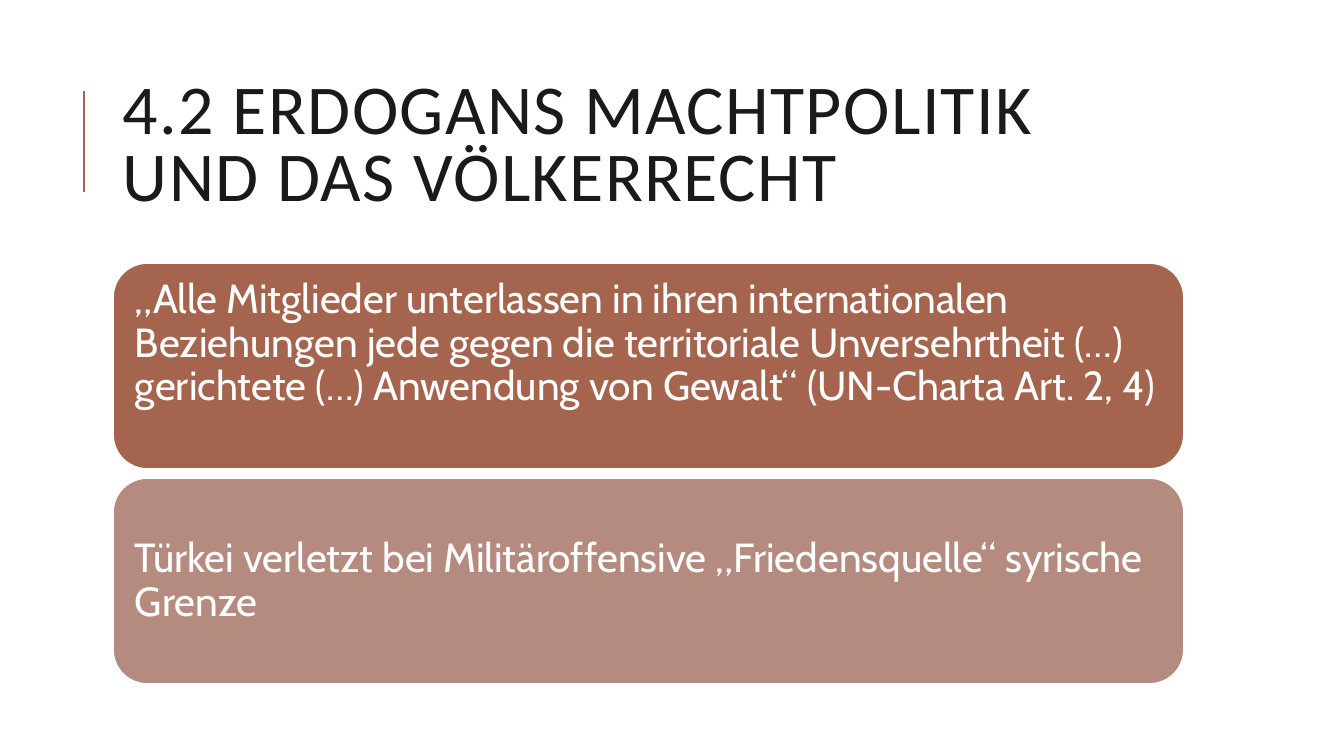
from dataclasses import dataclass

from lxml.etree import SubElement
from pptx import Presentation
from pptx.dml.color import RGBColor
from pptx.enum.shapes import MSO_CONNECTOR as Connector, MSO_SHAPE as Shape
from pptx.enum.text import MSO_ANCHOR as Anchor, PP_ALIGN as Align
from pptx.oxml.ns import qn
from pptx.util import Pt


@dataclass(frozen=True)
class Theme:
    rust: str = "A5644E"
    rose: str = "B58B80"
    ink: str = "1A1A1A"
    white: str = "FFFFFF"
    title_font: str = "Calibri"
    body_font: str = "Cabin"
    title_size: int = 50
    body_size: int = 29
    rule_width: float = 1.5
    border_width: float = 1.25


def px(length):
    return round(length * 914400 / 100.8)


class SlideBuilder:
    def __init__(self, slide, theme):
        self.shapes = slide.shapes
        self.theme = theme

    def set_text(self, frame, text, font, size, color, spacing):
        frame.word_wrap = True
        frame.vertical_anchor = Anchor.MIDDLE
        frame.text = text
        paragraph = frame.paragraphs[0]
        paragraph.alignment = Align.LEFT
        paragraph.line_spacing = spacing
        run = paragraph.runs[0]
        run.font.name = font
        run.font.size = Pt(size)
        run.font.color.rgb = RGBColor.from_string(color)
        return run

    def rule(self, x, top, bottom):
        accent = self.shapes.add_connector(Connector.STRAIGHT, px(x), px(bottom), px(x), px(top))
        accent.line.color.rgb = RGBColor.from_string(self.theme.rust)
        accent.line.width = Pt(self.theme.rule_width)
        SubElement(accent.element.spPr, qn("a:effectLst"))

    def title(self, text, left, top, width, height):
        heading = self.shapes.add_textbox(px(left), px(top), px(width), px(height))
        theme = self.theme
        run = self.set_text(heading.text_frame, text, theme.title_font, theme.title_size, theme.ink, 0.8)
        run.font._element.set("spc", "100")

    def card(self, text, fill, left, top, width, height, padding, bottom_padding):
        card = self.shapes.add_shape(Shape.ROUNDED_RECTANGLE, px(left), px(top), px(width), px(height))
        theme = self.theme
        card.shadow.inherit = False
        card.fill.solid()
        card.fill.fore_color.rgb = RGBColor.from_string(fill)
        card.line.color.rgb = RGBColor.from_string(theme.white)
        card.line.width = Pt(theme.border_width)
        frame = card.text_frame
        frame.margin_left = frame.margin_right = frame.margin_top = px(padding)
        frame.margin_bottom = px(bottom_padding)
        self.set_text(frame, text, theme.body_font, theme.body_size, theme.white, 0.9)


def main():
    deck = Presentation()
    deck.slide_width, deck.slide_height = px(1344), px(756)
    theme = Theme()
    builder = SlideBuilder(deck.slides.add_slide(deck.slide_layouts[6]), theme)

    left, width = 113, 1071
    builder.rule(84, 91, 192)
    builder.title("4.2 ERDOGANS MACHTPOLITIK UND DAS VÖLKERRECHT", left, 65, width, 165)

    first_top, height, gap, padding, text_line = 263, 206, 9, 12, 44
    statements = [
        ("„Alle Mitglieder unterlassen in ihren internationalen Beziehungen jede gegen die "
         "territoriale Unversehrtheit (…) gerichtete (…) Anwendung von Gewalt“ "
         "(UN-Charta Art. 2, 4)", theme.rust, padding + text_line),
        ("Türkei verletzt bei Militäroffensive „Friedensquelle“ syrische Grenze",
         theme.rose, padding),
    ]
    for row, (text, fill, bottom_padding) in enumerate(statements):
        top = first_top + row * (height + gap)
        builder.card(text, fill, left, top, width, height, padding, bottom_padding)

    deck.save("out.pptx")


if __name__ == "__main__":
    main()
